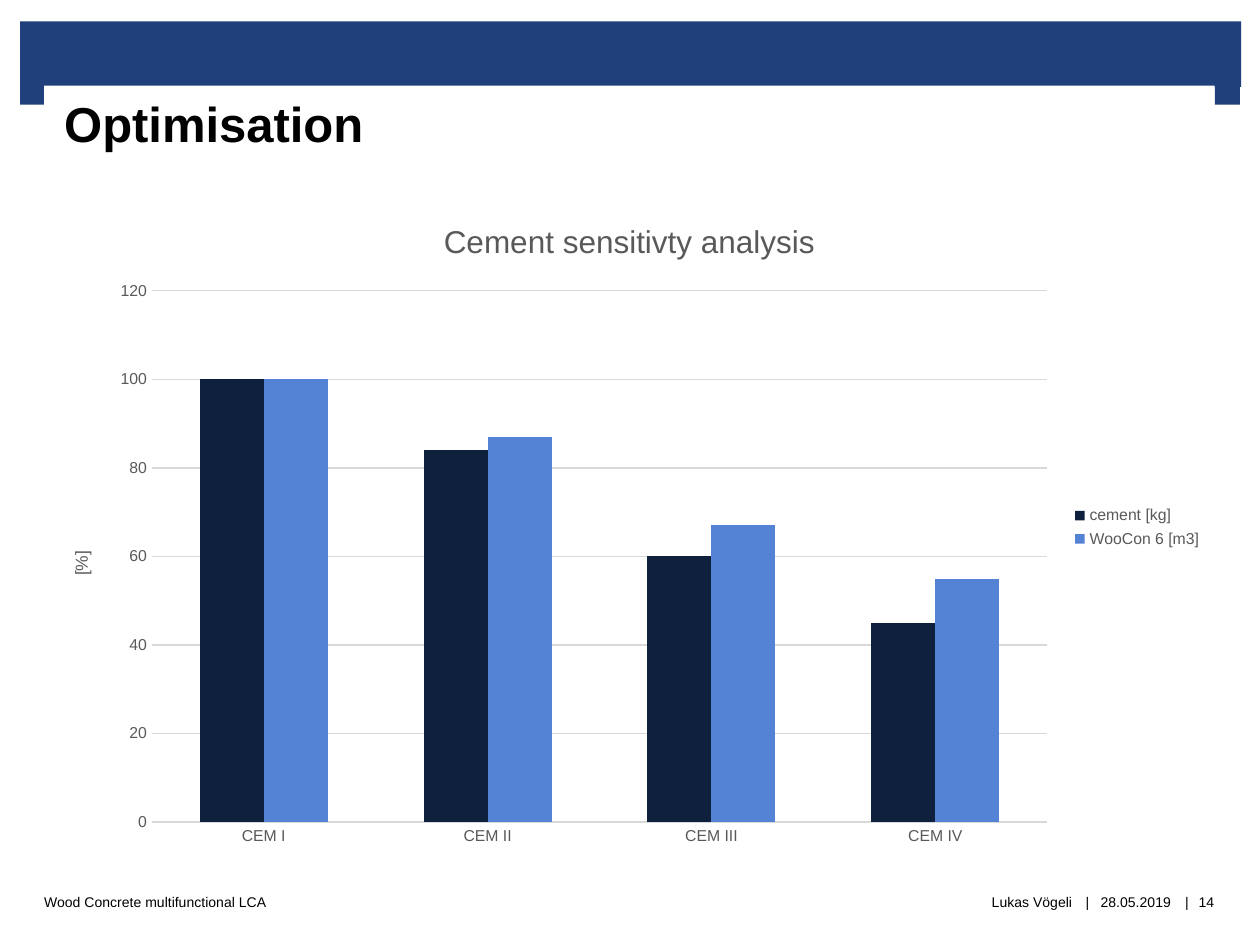
"""Build the Optimisation slide with its cement sensitivity chart."""
from lxml import etree
from pptx import Presentation
from pptx.chart.data import CategoryChartData
from pptx.dml.color import RGBColor
from pptx.enum.chart import XL_CHART_TYPE as Kind, XL_LEGEND_POSITION as Spot, XL_TICK_MARK as Tick
from pptx.enum.shapes import MSO_SHAPE as Form
from pptx.enum.text import MSO_ANCHOR as Anchor, PP_ALIGN as Align
from pptx.oxml.ns import qn
from pptx.util import Inches, Pt


def color(code):
    return RGBColor.from_string(code)


def style(font, size, code, bold=False):
    font.name = "Arial"
    font.size = Pt(size)
    font.bold = bold
    font.color.rgb = color(code)


deck = Presentation()
deck.slide_width, deck.slide_height = Inches(10), Inches(7.5)
slide = deck.slides.add_slide(deck.slide_layouts[6])
shapes = slide.shapes

blocks = [
    (0.16, 0.17, 9.69, 0.52, "1F407A"),
    (0.16, 0.65, 0.2, 0.18, "1F407A"),
    (9.64, 0.65, 0.2, 0.18, "1F407A"),
    (0.35, 0.68, 9.29, 1.06, "FFFFFF"),
]
for left, top, width, height, fill in blocks:
    block = shapes.add_shape(
        Form.RECTANGLE, Inches(left), Inches(top), Inches(width), Inches(height))
    block.shadow.inherit = False
    block.fill.solid()
    block.fill.fore_color.rgb = color(fill)
    block.line.fill.background()

frame = block.text_frame
frame.text = "Optimisation"
frame.word_wrap = True
frame.vertical_anchor = Anchor.TOP
frame.margin_left = frame.margin_right = Inches(0.16)
frame.margin_top, frame.margin_bottom = Inches(0.06), 0
frame.paragraphs[0].alignment = Align.LEFT
style(frame.paragraphs[0].runs[0].font, 28, "000000", True)

footer = [
    ("Wood Concrete multifunctional LCA", 0.35, 4.65, Align.LEFT),
    ("Lukas Vögeli", 5, 3.51, Align.RIGHT),
    ("|", 8.57, 0.12, Align.CENTER),
    ("28.05.2019", 8.68, 0.67, Align.CENTER),
    ("|", 9.36, 0.12, Align.CENTER),
    ("14", 9.43, 0.29, Align.CENTER),
]
for text, left, width, align in footer:
    box = shapes.add_textbox(Inches(left), Inches(6.9), Inches(width), Inches(0.51))
    frame = box.text_frame
    frame.text = text
    frame.word_wrap = True
    frame.vertical_anchor = Anchor.MIDDLE
    frame.margin_left = frame.margin_right = 0
    frame.margin_top = frame.margin_bottom = 0
    frame.paragraphs[0].alignment = align
    style(frame.paragraphs[0].runs[0].font, 8, "000000")

data = CategoryChartData()
data.categories = ["CEM I", "CEM II", "CEM III", "CEM IV"]
data.add_series("cement [kg]", (100, 84, 60, 45))
data.add_series("WooCon 6 [m3]", (100, 87, 67, 55))
chart = shapes.add_chart(
    Kind.COLUMN_CLUSTERED, Inches(0.35), Inches(1.55), Inches(9.29), Inches(5.27), data).chart
style(chart.font, 10, "000000")

plot = chart.plots[0]
plot.gap_width = 150
plot.overlap = 0
plot.vary_by_categories = False
for bars, fill in zip(plot.series, ("0F203D", "5482D4")):
    bars.format.fill.solid()
    bars.format.fill.fore_color.rgb = color(fill)

cats, vals = chart.category_axis, chart.value_axis
for axis in (cats, vals):
    axis.major_tick_mark = axis.minor_tick_mark = Tick.NONE
    style(axis.tick_labels.font, 9, "595959")
vals.minimum_scale, vals.maximum_scale, vals.major_unit = 0, 120, 20
vals.tick_labels.number_format = "0"
vals.tick_labels.number_format_is_linked = False
vals.format.line.fill.background()
for line in (cats.format.line, vals.major_gridlines.format.line):
    line.color.rgb = color("D9D9D9")
    line.width = Pt(0.75)

chart.has_title = True
titles = [(chart.chart_title, "Cement sensitivty analysis", 18), (vals.axis_title, "[%]", 10)]
for title, text, size in titles:
    title.text_frame.text = text
    style(title.text_frame.paragraphs[0].runs[0].font, size, "595959")
chart.chart_title.include_in_layout = False

chart.has_legend = True
chart.legend.position = Spot.RIGHT
chart.legend.include_in_layout = False
style(chart.legend.font, 9, "595959")

area = cats._element.getparent()
for old in area.findall(qn("c:layout")):
    area.remove(old)
layout = etree.Element(qn("c:layout"))
area.insert(0, layout)
manual = etree.SubElement(layout, qn("c:manualLayout"))
rules = [("layoutTarget", "inner"), ("xMode", "edge"), ("yMode", "edge"),
         ("x", "0.092"), ("y", "0.144"), ("w", "0.765"), ("h", "0.8")]
for tag, value in rules:
    etree.SubElement(manual, qn("c:" + tag)).set("val", value)

deck.save("out.pptx")
